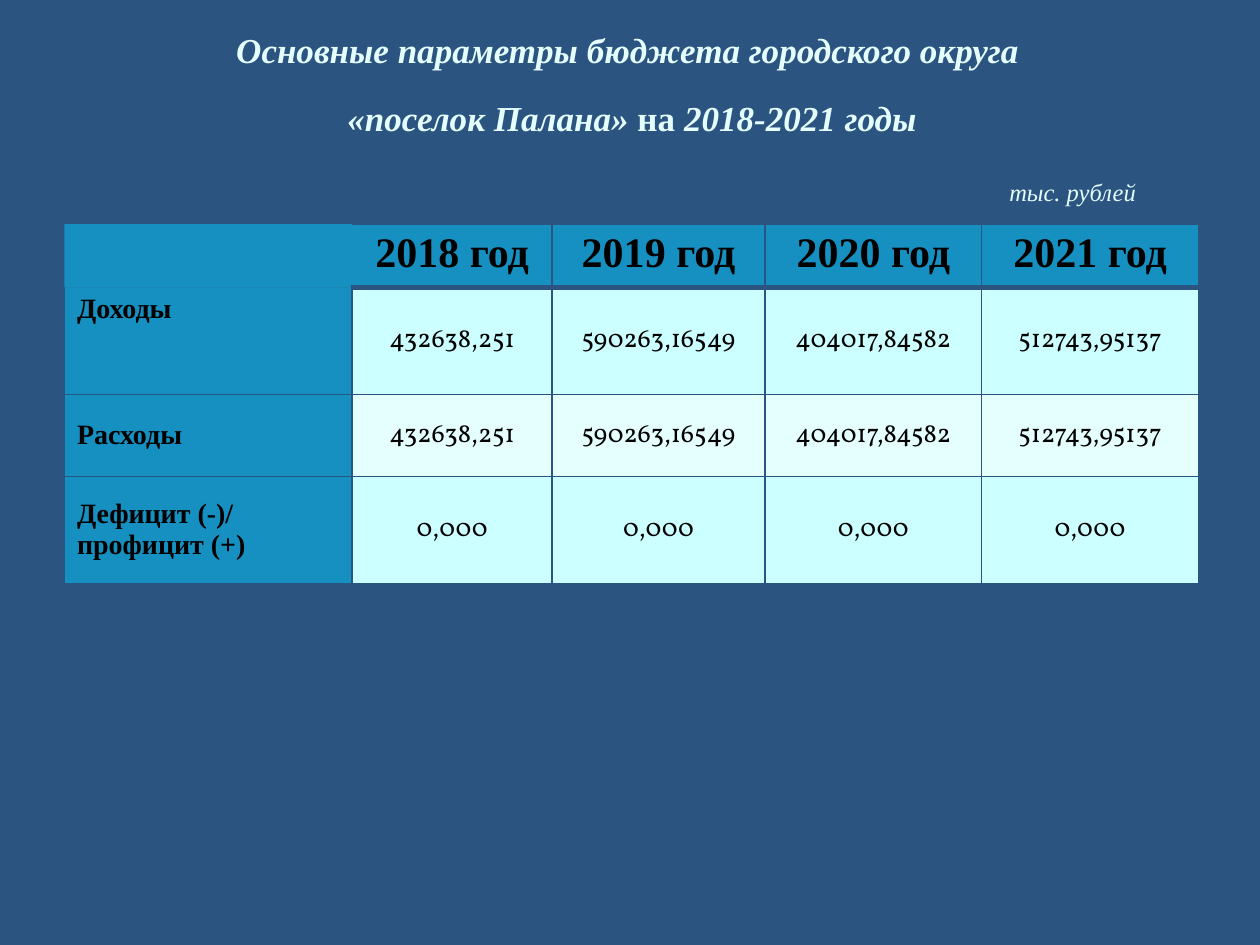
"""Build the slide with the main budget figures for 2018-2021."""
from dataclasses import dataclass, field
from typing import Any

import lxml.etree
import pptx
import pptx.dml.color
import pptx.enum.text
import pptx.oxml.ns
import pptx.util

Cm = pptx.util.Cm
Pt = pptx.util.Pt
Align = pptx.enum.text.PP_ALIGN
Anchor = pptx.enum.text.MSO_ANCHOR
qn = pptx.oxml.ns.qn

HUES = {
    "back": "2B5481",
    "title": "E5FFFF",
    "head": "00CCFF",
    "odd": "CCFFFF",
    "even": "E5FFFF",
    "ink": "000000",
}
SERIF = "Times New Roman"
TITLE = {"name": SERIF, "size": Pt(20), "bold": True, "italic": True}
PLAIN = {**TITLE, "italic": False}
UNIT = {**TITLE, "size": Pt(14), "bold": False}
YEAR = {"name": SERIF, "size": Pt(24), "bold": True}
LABEL = {**YEAR, "size": Pt(16)}
VALUE = {"name": "Vollkorn", "size": Pt(15), "bold": False}

YEARS = ["2018 год", "2019 год", "2020 год", "2021 год"]
SUMS = ["432638,251", "590263,16549", "404017,84582", "512743,95137"]
WIDTHS = [5.8, 4.03, 4.29, 4.37, 4.37]


@dataclass
class Row:
    """One table row with its look."""

    label: str
    texts: list[str]
    high: float
    fill: str
    anchor: Any = Anchor.MIDDLE
    face: dict = field(default_factory=lambda: VALUE)


ROWS = [
    Row("", YEARS, 1.27, "head", Anchor.TOP, YEAR),
    Row("Доходы", SUMS, 2.16, "odd"),
    Row("Расходы", SUMS, 1.65, "even"),
    Row("Дефицит (-)/\nпрофицит (+)", ["0,000"] * 4, 2.16, "odd"),
]


def tint(name: str) -> pptx.dml.color.RGBColor:
    """Return a named colour."""
    return pptx.dml.color.RGBColor.from_string(HUES[name])


def style(font: Any, face: dict, hue: str) -> None:
    """Set the font from a dict of format values."""
    for key, value in face.items():
        setattr(font, key, value)
    font.color.rgb = tint(hue)


def add_run(para: Any, text: str, face: dict) -> None:
    """Add a title run to a paragraph."""
    run = para.add_run()
    run.text = text
    style(run.font, face, "title")


def add_title(slide: Any) -> None:
    """Draw the title and the unit line."""
    box = slide.shapes.add_textbox(Cm(1.73), Cm(1.65), Cm(22.02), Cm(2.64))
    frame = box.text_frame
    frame.word_wrap = True
    frame.vertical_anchor = Anchor.BOTTOM
    head, unit = frame.paragraphs[0], frame.add_paragraph()
    for para, align in ((head, Align.CENTER), (unit, Align.RIGHT)):
        para.alignment = align
        para.line_spacing = Pt(39)
    add_run(head, "Основные параметры бюджета городского округа ", TITLE)
    head.add_line_break()
    add_run(head, "«поселок Палана»", TITLE)
    add_run(head, " на ", PLAIN)
    add_run(head, "2018-2021 годы", TITLE)
    add_run(unit, "тыс. рублей", UNIT)
    unit._p.get_or_add_pPr().set("marR", str(Cm(0.6)))


def add_edge(cell: Any, side: str, width: float) -> None:
    """Draw one cell border, or none at zero width."""
    props = cell._tc.get_or_add_tcPr()
    line = lxml.etree.SubElement(props, qn(f"a:ln{side}"), w=str(Pt(width)))
    if not width:
        lxml.etree.SubElement(line, qn("a:noFill"))
        return
    solid = lxml.etree.SubElement(line, qn("a:solidFill"))
    lxml.etree.SubElement(solid, qn("a:srgbClr"), val=HUES["back"])


def edges(row: int, col: int) -> dict[str, float]:
    """Return the border widths of a cell by side."""
    sides = dict.fromkeys("LRTB", 1)
    if row == 0:
        sides["B"] = 3
        if col == 1:
            sides["L"] = 0
        if col == 0:
            sides = dict.fromkeys("LRTB", 0)
    elif row == 1:
        sides["T"] = 3 if col else 0
    return sides


def paint(cell: Any, hue: str) -> None:
    """Fill a cell, with half strength for the head colour."""
    cell.fill.solid()
    cell.fill.fore_color.rgb = tint(hue)
    if hue == "head":
        props = cell._tc.tcPr
        shade = props.find(qn("a:solidFill")).find(qn("a:srgbClr"))
        lxml.etree.SubElement(shade, qn("a:alpha"), val="50000")


def add_table(slide: Any) -> None:
    """Draw the budget table."""
    wide, high = sum(WIDTHS), sum(row.high for row in ROWS)
    shape = slide.shapes.add_table(
        len(ROWS), len(WIDTHS), Cm(1.3), Cm(4.52), Cm(wide), Cm(high)
    )
    table = shape.table
    table.first_row = table.horz_banding = False
    props = table._tbl.tblPr
    props.find(qn("a:tableStyleId")).text = "{2D5ABB26-0587-4C30-8999-92F81FD0307C}"
    for col, width in zip(table.columns, WIDTHS):
        col.width = Cm(width)
    for r, row in enumerate(ROWS):
        table.rows[r].height = Cm(row.high)
        for c, text in enumerate([row.label, *row.texts]):
            cell = table.cell(r, c)
            cell.text = text
            cell.vertical_anchor = row.anchor
            if r == 1 and c == 0:
                cell.vertical_anchor = Anchor.TOP
            for para in cell.text_frame.paragraphs:
                para.alignment = Align.CENTER if c else Align.LEFT
                for run in para.runs:
                    style(run.font, row.face if c else LABEL, "ink")
            for side, width in edges(r, c).items():
                add_edge(cell, side, width)
            paint(cell, row.fill if c else "head")


def main() -> None:
    """Build and save the slide."""
    deck = pptx.Presentation()
    deck.slide_width, deck.slide_height = Cm(25.4), Cm(19.05)
    slide = deck.slides.add_slide(deck.slide_layouts[6])
    slide.background.fill.solid()
    slide.background.fill.fore_color.rgb = tint("back")
    add_title(slide)
    add_table(slide)
    deck.save("out.pptx")


if __name__ == "__main__":
    main()
